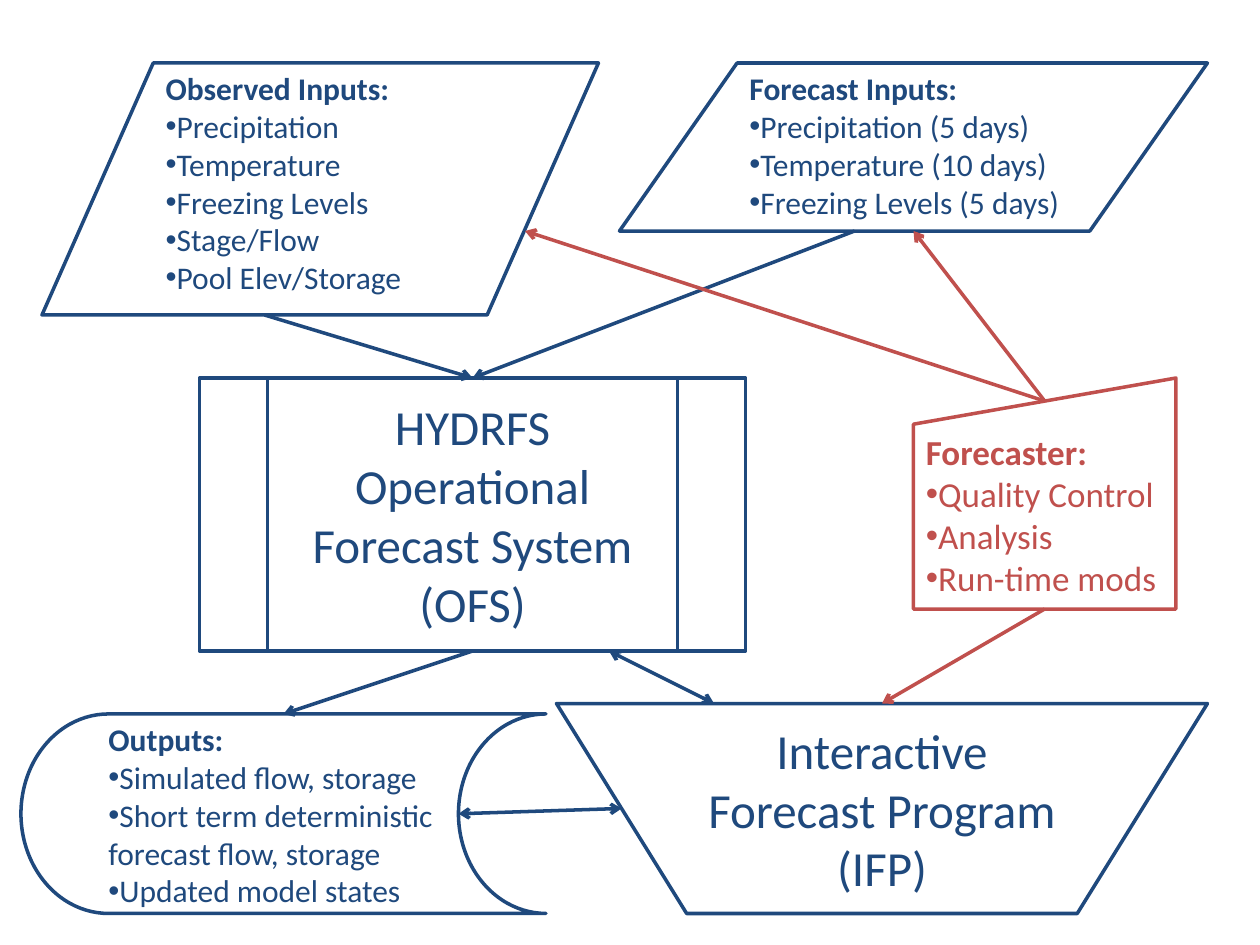
"""Build a one-slide flow diagram of a river forecast system."""
from lxml import etree
from pptx import Presentation
from pptx.dml.color import RGBColor
from pptx.enum.shapes import MSO_CONNECTOR, MSO_SHAPE
from pptx.enum.text import MSO_ANCHOR, PP_ALIGN
from pptx.oxml.ns import qn
from pptx.util import Inches, Pt

STRAIGHT = MSO_CONNECTOR.STRAIGHT
DATA = MSO_SHAPE.FLOWCHART_DATA
PROCESS = MSO_SHAPE.FLOWCHART_PREDEFINED_PROCESS
STORAGE = MSO_SHAPE.FLOWCHART_STORED_DATA
OPERATION = MSO_SHAPE.FLOWCHART_MANUAL_OPERATION
INPUT = MSO_SHAPE.FLOWCHART_MANUAL_INPUT
TOP, MIDDLE = MSO_ANCHOR.TOP, MSO_ANCHOR.MIDDLE
LEFT, CENTER = PP_ALIGN.LEFT, PP_ALIGN.CENTER

BLUE, RED = "1F497D", "C0504D"
COLUMNS, ROWS = 120, 90

presentation = Presentation()
presentation.slide_width = Inches(10)
presentation.slide_height = Inches(7.5)
slide = presentation.slides.add_slide(presentation.slide_layouts[6])
column = presentation.slide_width / COLUMNS
row = presentation.slide_height / ROWS


def place(*grid):
    """Turn alternating columns and rows into slide lengths."""
    return [round(value * unit) for value, unit in zip(grid, (column, row) * 2)]


def color(value):
    """Make a colour from a hex string."""
    return RGBColor.from_string(value)


lists = [
    (DATA, (4, 6, 53, 24), BLUE, 18, 0.1, "Observed Inputs:",
     ["Precipitation", "Temperature", "Freezing Levels", "Stage/Flow", "Pool Elev/Storage"]),
    (DATA, (59, 6, 56, 16), BLUE, 18, 0.1, "Forecast Inputs:",
     ["Precipitation (5 days)", "Temperature (10 days)", "Freezing Levels (5 days)"]),
    (STORAGE, (2, 68, 50, 19), BLUE, 18, 0, "Outputs:",
     ["Simulated flow, storage", "Short term deterministic forecast flow, storage",
      "Updated model states"]),
    (INPUT, (87, 36, 25, 22), RED, 20, 0.1, "Forecaster:",
     ["Quality Control", "Analysis", "Run-time mods"]),
]
programs = [
    (PROCESS, (19, 36, 52, 26), BLUE, 28, 0.1, "",
     ["HYDRFS", "Operational Forecast System (OFS)"]),
    (OPERATION, (53, 67, 62, 20), BLUE, 28, 0.1, "",
     ["Interactive Forecast Program (IFP)"]),
]

for kind, grid, ink, size, margin, heading, items in lists + programs:
    shape = slide.shapes.add_shape(kind, *place(*grid))
    shape.shadow.inherit = False
    shape.fill.background()
    shape.line.color.rgb = color(ink)
    shape.line.width = Pt(2)
    frame = shape.text_frame
    frame.word_wrap = True
    frame.margin_left = frame.margin_right = Inches(margin)
    frame.vertical_anchor = TOP if heading else MIDDLE
    texts = [heading] + items if heading else items
    for index, text in enumerate(texts):
        paragraph = frame.add_paragraph() if index else frame.paragraphs[0]
        paragraph.alignment = LEFT if heading else CENTER
        if heading and index:
            properties = paragraph._p.get_or_add_pPr()
            etree.SubElement(properties, qn("a:buFont"), typeface="Arial")
            etree.SubElement(properties, qn("a:buChar"), char="•")
        run = paragraph.add_run()
        run.text = text
        run.font.name = "Calibri"
        run.font.size = Pt(size)
        run.font.bold = text == heading
        run.font.color.rgb = color(ink)

ONE_WAY, BOTH_WAYS = ["tailEnd"], ["headEnd", "tailEnd"]
arrows = [
    ((25.2, 30, 45, 36), BLUE, ONE_WAY),
    ((81.4, 22, 45, 36), BLUE, ONE_WAY),
    ((45, 62, 27, 68), BLUE, ONE_WAY),
    ((43.67, 77.5, 59.2, 77), BLUE, BOTH_WAYS),
    ((99.5, 58, 84, 67), RED, ONE_WAY),
    ((99.5, 38.2, 87, 22), RED, ONE_WAY),
    ((99.5, 38.2, 50, 22), RED, ONE_WAY),
    ((58, 62, 68, 67), BLUE, BOTH_WAYS),
]
for ends, ink, heads in arrows:
    arrow = slide.shapes.add_connector(STRAIGHT, *place(*ends))
    arrow.line.color.rgb = color(ink)
    arrow.line.width = Pt(2)
    line = arrow.line._get_or_add_ln()
    for head in heads:
        etree.SubElement(line, qn(f"a:{head}"), type="arrow")
    etree.SubElement(arrow._element.spPr, qn("a:effectLst"))

presentation.save("out.pptx")
